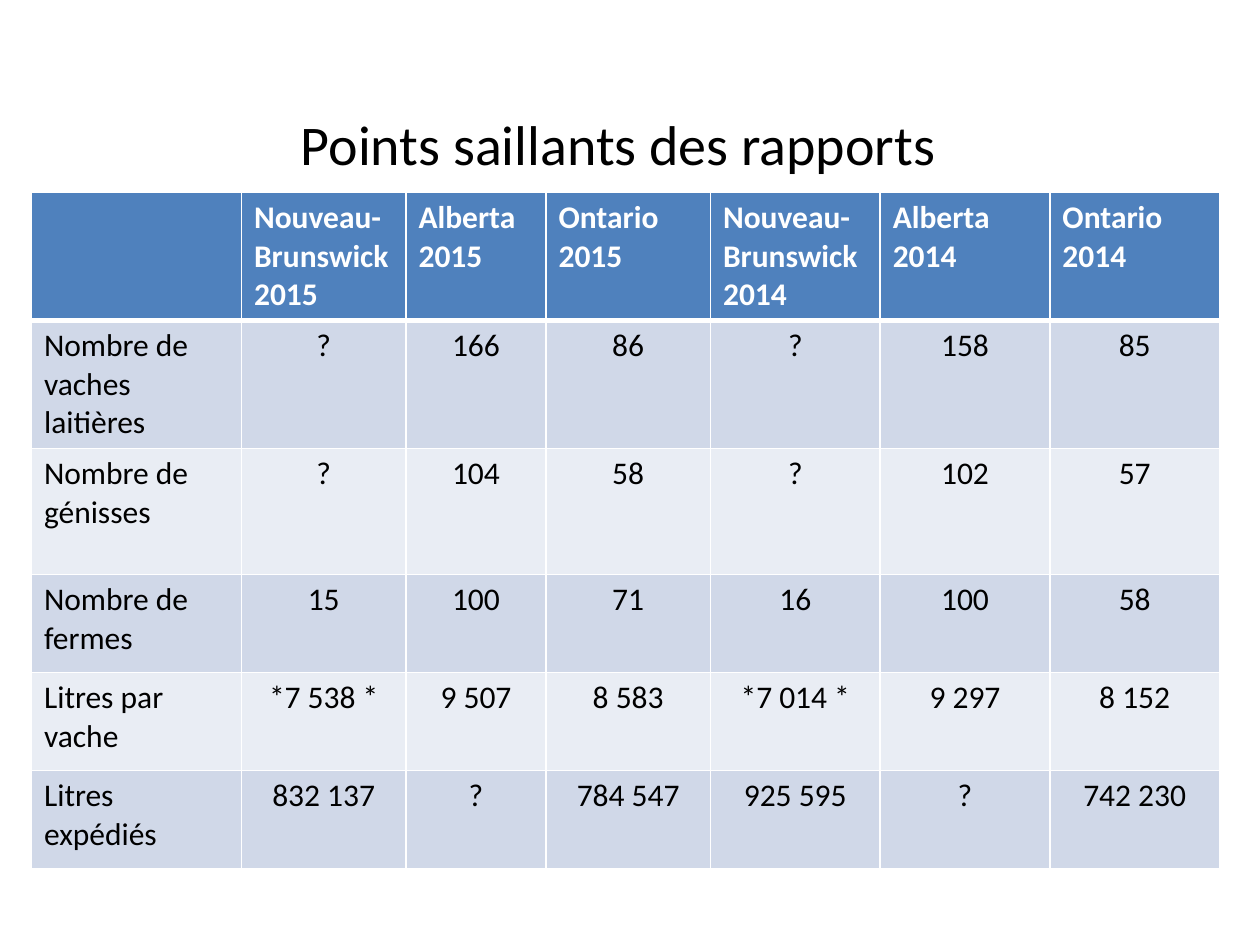
from lxml.etree import SubElement
from pptx import Presentation
from pptx.dml.color import RGBColor
from pptx.enum.text import PP_ALIGN
from pptx.oxml.ns import qn
from pptx.util import Pt

COLUMN_WIDTHS = [120, 94, 80, 94, 97, 97, 97]
ROW_HEIGHTS = [72, 72, 72, 56, 56, 56]
REPORT_ROWS = [
    ["", "Nouveau-Brunswick 2015", "Alberta 2015", "Ontario 2015",
     "Nouveau-Brunswick 2014", "Alberta 2014", "Ontario 2014"],
    ["Nombre de vaches laitières", "?", "166", "86", "?", "158", "85"],
    ["Nombre de génisses", "?", "104", "58", "?", "102", "57"],
    ["Nombre de fermes", "15", "100", "71", "16", "100", "58"],
    ["Litres par vache", "*7 538 *", "9 507", "8 583", "*7 014 *", "9 297", "8 152"],
    ["Litres expédiés", "832 137", "?", "784 547", "925 595", "?", "742 230"],
]


def color(value):
    return RGBColor.from_string(value)


class SlideBuilder:
    """Holds the slide style and draws each kind of element on the page."""

    font = "Calibri"
    black, white = "000000", "FFFFFF"
    header_fill = "4F81BD"
    band_fills = ["D0D8E8", "E9EDF4"]

    def __init__(self, page):
        self.page = page

    def set_text(self, frame, text, size, ink, bold=False, align=PP_ALIGN.LEFT):
        frame.text = text
        frame.word_wrap = True
        for para in frame.paragraphs:
            para.alignment = align
            for span in para.runs:
                span.font.name = self.font
                span.font.size = Pt(size)
                span.font.bold = bold
                span.font.color.rgb = color(ink)

    def title(self, text, left, top, width, height):
        box = self.page.shapes.add_textbox(Pt(left), Pt(top), Pt(width), Pt(height))
        self.set_text(box.text_frame, text, 32, self.black, align=PP_ALIGN.CENTER)

    def border(self, cell, side, width):
        properties = cell._tc.get_or_add_tcPr()
        line = SubElement(properties, qn(f"a:ln{side}"), w=str(Pt(width)))
        fill = SubElement(line, qn("a:solidFill"))
        SubElement(fill, qn("a:srgbClr"), val=self.white)

    def cell(self, cell, text, row, column):
        header = row == 0
        centered = not header and column > 0
        self.set_text(cell.text_frame, text, 18, self.white if header else self.black,
                      bold=header, align=PP_ALIGN.CENTER if centered else PP_ALIGN.LEFT)
        for side in "LRTB":
            heavy = (row, side) in [(0, "B"), (1, "T")]
            self.border(cell, side, 3 if heavy else 1)
        cell.fill.solid()
        band = self.band_fills[(row - 1) % 2]
        cell.fill.fore_color.rgb = color(self.header_fill if header else band)

    def table(self, rows, widths, heights, left, top):
        frame = self.page.shapes.add_table(
            len(rows), len(widths), Pt(left), Pt(top), Pt(sum(widths)), Pt(sum(heights)))
        table = frame.table
        for column, width in zip(table.columns, widths):
            column.width = Pt(width)
        for line, height in zip(table.rows, heights):
            line.height = Pt(height)
        for row, texts in enumerate(rows):
            for column, text in enumerate(texts):
                self.cell(table.cell(row, column), text, row, column)


def main():
    deck = Presentation()
    deck.slide_width, deck.slide_height = Pt(720), Pt(540)
    builder = SlideBuilder(deck.slides.add_slide(deck.slide_layouts[6]))
    builder.table(REPORT_ROWS, COLUMN_WIDTHS, ROW_HEIGHTS, 18, 110)
    builder.title("Points saillants des rapports ", 18, 59, 678, 46)
    deck.save("out.pptx")


if __name__ == "__main__":
    main()
